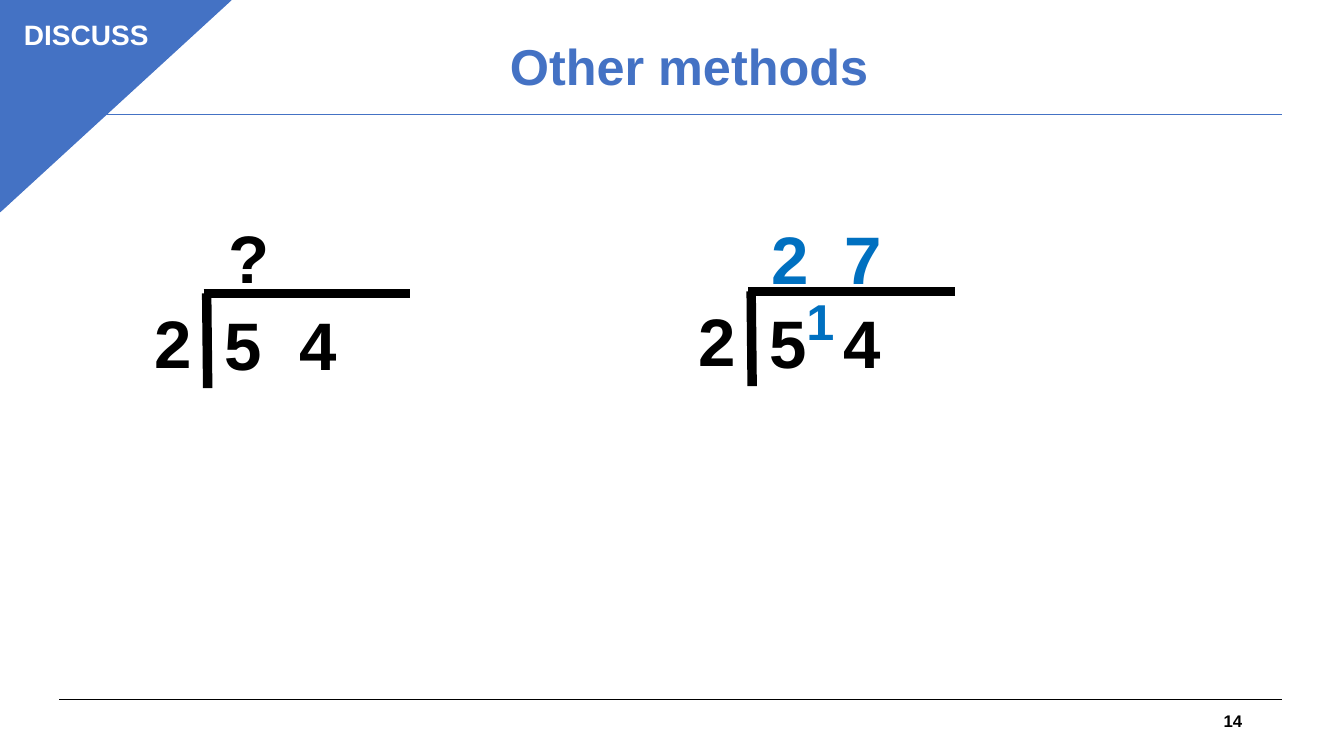
from lxml.etree import SubElement
from pptx import Presentation
from pptx.dml.color import RGBColor
from pptx.enum.shapes import MSO_CONNECTOR, MSO_SHAPE
from pptx.enum.text import MSO_ANCHOR, MSO_AUTO_SIZE, PP_ALIGN
from pptx.oxml.ns import qn
from pptx.util import Inches, Pt

BLACK = RGBColor(0x00, 0x00, 0x00)
WHITE = RGBColor(0xFF, 0xFF, 0xFF)
BLUE = RGBColor(0x44, 0x72, 0xC4)
ANSWER_BLUE = RGBColor(0x00, 0x70, 0xC0)
FONT = "Arial"
DIGIT_W, DIGIT_H = 1.36, 0.91


class SlideBuilder:
    def __init__(self, prs):
        self.slide = prs.slides.add_slide(prs.slide_layouts[5])
        self.shapes = self.slide.shapes

    def set_text(self, sp, text, size, color, align=PP_ALIGN.LEFT, anchor=MSO_ANCHOR.TOP):
        tf = sp.text_frame
        tf.word_wrap = True
        tf.vertical_anchor = anchor
        tf.text = text
        p = tf.paragraphs[0]
        p.alignment = align
        p.font.name, p.font.size, p.font.bold = FONT, Pt(size), True
        p.font.color.rgb = color
        return tf

    def title(self, text, x, y, w, h):
        sp = self.shapes.title
        sp.left, sp.top, sp.width, sp.height = map(Inches, (x, y, w, h))
        tf = self.set_text(sp, text, 36, BLUE, PP_ALIGN.CENTER, MSO_ANCHOR.MIDDLE)
        tf.paragraphs[0].line_spacing = 0.9

    def text(self, text, x, y, w, h, size, color=BLACK, **layout):
        sp = self.shapes.add_textbox(*map(Inches, (x, y, w, h)))
        self.set_text(sp, text, size, color, **layout)
        return sp

    def digits(self, text, x, y, color=BLACK, size=48, h=DIGIT_H):
        sp = self.text(text, x, y, DIGIT_W, h, size, color)
        sp.text_frame.auto_size = MSO_AUTO_SIZE.SHAPE_TO_FIT_TEXT

    def framed_digit(self, text, x, y, color):
        """A digit in an unfilled rectangle with a white outline."""
        sp = self.shapes.add_shape(
            MSO_SHAPE.RECTANGLE, *map(Inches, (x, y, DIGIT_W, DIGIT_H)))
        sp.shadow.inherit = False
        sp.fill.background()
        sp.line.color.rgb, sp.line.width = WHITE, Pt(4.5)
        tf = self.set_text(sp, text, 48, color)
        tf.auto_size = MSO_AUTO_SIZE.SHAPE_TO_FIT_TEXT

    def line(self, x1, y1, x2, y2, color=BLACK, width=0.75):
        cxn = self.shapes.add_connector(
            MSO_CONNECTOR.STRAIGHT, *map(Inches, (x1, y1, x2, y2)))
        cxn.line.color.rgb, cxn.line.width = color, Pt(width)
        SubElement(cxn.element.spPr, qn("a:effectLst"))

    def division(self, divisor, dividend, x, y):
        """Short division bracket with its top left corner at (x, y)."""
        self.digits(divisor, x - 0.59, y + 0.03)
        self.digits(dividend, x + 0.11, y + 0.05)
        self.line(x, y, x + 2.05, y, width=6.75)
        self.line(x + 0.03, y, x + 0.04, y + 0.94, width=6.75)

    def corner(self, text, w, h):
        sp = self.shapes.add_shape(
            MSO_SHAPE.ISOSCELES_TRIANGLE, 0, 0, Inches(w), Inches(h))
        sp.adjustments[0] = 0
        sp.element.spPr.xfrm.set("flipV", "1")
        sp.shadow.inherit = False
        sp.fill.solid()
        sp.fill.fore_color.rgb = BLUE
        sp.line.color.rgb, sp.line.width = BLUE, Pt(1)
        self.text(text, 0, 0.12, 1.71, 0.44, 20, WHITE, align=PP_ALIGN.CENTER)


def main():
    prs = Presentation()
    prs.slide_width, prs.slide_height = Inches(13.33), Inches(7.5)
    s = SlideBuilder(prs)

    s.line(0.59, 6.94, 12.72, 6.94)
    s.line(0.59, 1.14, 12.72, 1.14, BLUE)
    s.text("14", 9.42, 6.95, 3, 0.4, 12,
           align=PP_ALIGN.RIGHT, anchor=MSO_ANCHOR.MIDDLE)

    s.framed_digit("?", 2.17, 2.1, BLACK)
    s.division("2", "5  4", 2.02, 2.91)

    s.framed_digit("2", 7.55, 2.11, ANSWER_BLUE)
    s.division("2", "5  4", 7.42, 2.89)
    s.digits("1", 7.9, 2.83, ANSWER_BLUE, size=36, h=0.71)
    s.digits("7", 8.28, 2.11, ANSWER_BLUE)

    s.title("Other methods", 2.53, 0.13, 8.61, 1.11)
    s.corner("DISCUSS", 2.29, 2.1)
    prs.save("out.pptx")


if __name__ == "__main__":
    main()
